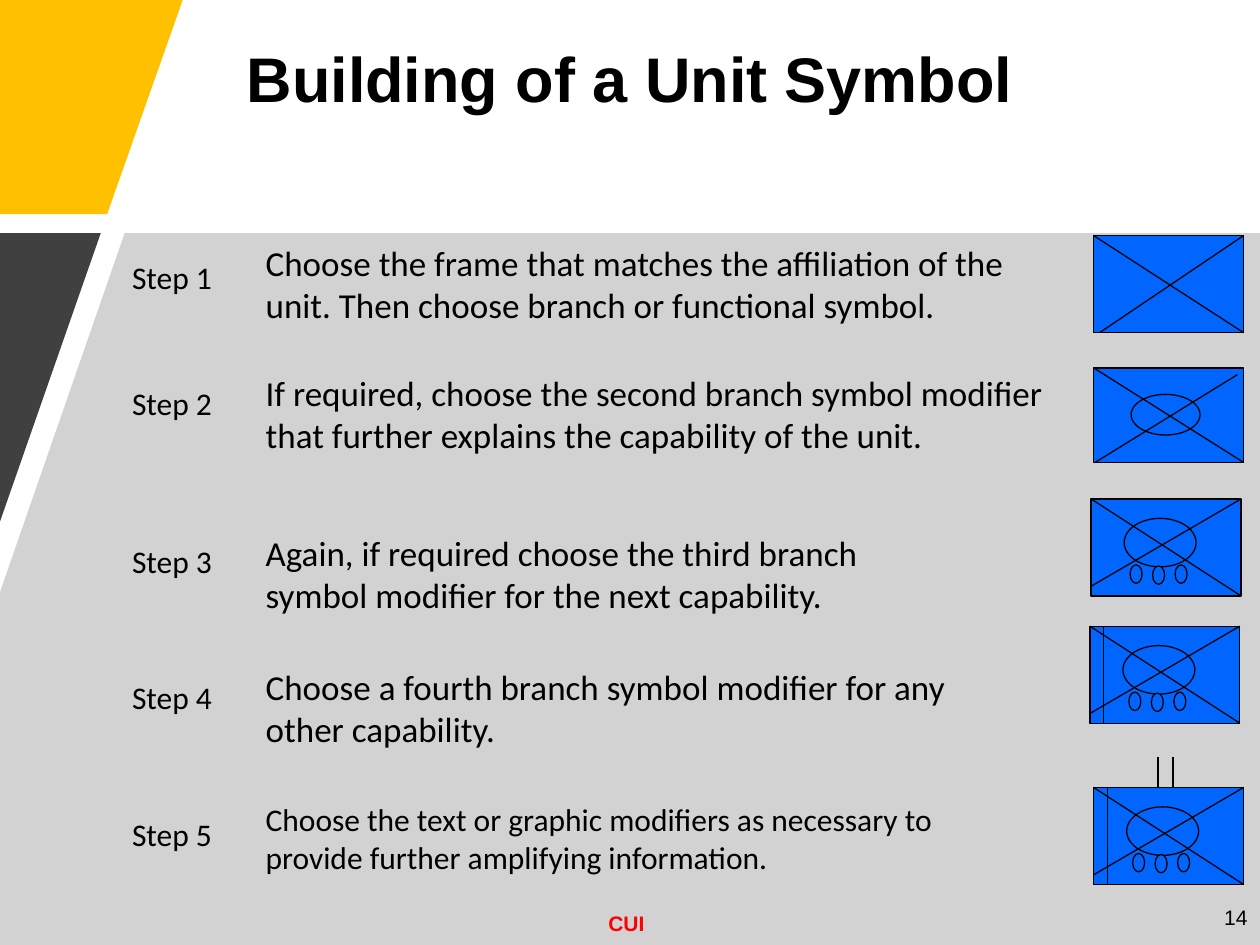
import pptx
import pptx.util
import pptx.dml.color
import pptx.enum.shapes
import pptx.enum.text
import lxml.etree
from dataclasses import dataclass
from typing import NamedTuple

PP = pptx.enum.text.PP_ALIGN
ANCHOR = pptx.enum.text.MSO_ANCHOR
KIND = pptx.enum.shapes.MSO_SHAPE
LINE = pptx.enum.shapes.MSO_CONNECTOR.STRAIGHT
Pt = pptx.util.Pt
A = "http://schemas.openxmlformats.org/drawingml/2006/main"

# Grid of 100 columns by 75 rows
WIDE, HIGH = pptx.util.Inches(10), pptx.util.Inches(7.5)
COL, ROW = WIDE / 100, HIGH / 75


@dataclass(frozen=True)
class Theme:
    ink: str = "000000"
    gold: str = "FFC000"
    dark: str = "404040"
    gray: str = "A6A6A6"
    blue: str = "0066FF"
    red: str = "FF0000"
    head: str = "Arial"
    body: str = "Calibri"
    title: float = 36
    text: float = 20
    label: float = 18
    small: float = 12
    thin: float = 0.75
    thick: float = 1.5


class Box(NamedTuple):
    x: float
    y: float
    w: float
    h: float


class Mark(NamedTuple):
    """Parts of a unit symbol, in shares of its frame."""
    rise: tuple[float, float, float, float]
    oval: Box | None = None
    wheels: tuple[Box, ...] = ()
    bars: tuple[float, ...] = ()
    masts: tuple[float, ...] = ()


class Step(NamedTuple):
    top: float
    text: str
    box: Box
    frame: Box
    mark: Mark
    size: float


THEME = Theme()
SLOPE = (0, 0.9, 1, 0)
OVAL = Box(0.22, 0.2, 0.48, 0.5)
WHEELS = tuple(Box(0.26 + 0.15 * i, y, 0.08, 0.19)
               for i, y in enumerate((0.68, 0.69, 0.68)))

STEPS = [
    Step(20, "Choose the frame that matches the affiliation of the unit. "
         "Then choose branch or functional symbol.",
         Box(20.1, 18.7, 62.8, 7.7), Box(86.8, 18.7, 11.9, 7.7),
         Mark((0.04, 1, 1, 0)), THEME.text),
    Step(30, "If required, choose the second branch symbol modifier "
         "that further explains the capability of the unit.",
         Box(20.1, 29, 66.9, 7.7), Box(86.8, 29.2, 11.9, 7.5),
         Mark((0.01, 1, 0.96, 0.07), Box(0.25, 0.28, 0.46, 0.43)), THEME.text),
    Step(42.5, "Again, if required choose the third branch "
         "symbol modifier for the next capability.",
         Box(20.1, 41.7, 57.1, 7.7), Box(86.6, 39.6, 11.9, 7.7),
         Mark(SLOPE, OVAL, WHEELS), THEME.text),
    Step(53.3, "Choose a fourth branch symbol modifier for any other capability.",
         Box(20.1, 52.3, 57.1, 7.7), Box(86.5, 49.7, 11.9, 7.7),
         Mark(SLOPE, OVAL, WHEELS, (0.09,)), THEME.text),
    Step(64.2, "Choose the text or graphic modifiers as necessary to "
         "provide further amplifying information.",
         Box(20.1, 63, 57.1, 7), Box(86.8, 62.5, 11.9, 7.7),
         Mark(SLOPE, OVAL, WHEELS, (0.09,), (0.43, 0.53)), THEME.label),
]


def rgb(tint: str):
    return pptx.dml.color.RGBColor.from_string(tint)


def place(box: Box) -> list[int]:
    return [round(v * u) for v, u in zip(box, (COL, ROW, COL, ROW))]


def within(frame: Box, x: float, y: float) -> tuple[float, float]:
    return frame.x + x * frame.w, frame.y + y * frame.h


def write(shape, text: str, *, size: float, font: str = THEME.body,
          tint: str = THEME.ink, bold: bool = False, align=PP.LEFT,
          anchor=ANCHOR.TOP, wrap: bool = True, lead: float = 1):
    frame = shape.text_frame
    frame.word_wrap = wrap
    frame.auto_size = pptx.enum.text.MSO_AUTO_SIZE.NONE
    frame.vertical_anchor = anchor
    par = frame.paragraphs[0]
    par.text, par.alignment, par.line_spacing = text, align, lead
    par.space_before = Pt(0)
    par.font.size, par.font.name, par.font.bold = Pt(size), font, bold
    par.font.color.rgb = rgb(tint)


def label(shapes, box: Box, text: str, **form):
    write(shapes.add_textbox(*place(box)), text, **form)


def panel(shapes, points: list[tuple[float, float]], tint: str, alpha: int = 100):
    first, *rest = [(round(x * COL), round(y * ROW)) for x, y in points]
    pen = shapes.build_freeform(*first)
    pen.add_line_segments(rest, close=True)
    shape = pen.convert_to_shape()
    shape.shadow.inherit = False
    shape.fill.solid()
    shape.fill.fore_color.rgb = rgb(tint)
    shape.line.fill.background()
    if alpha < 100:
        color = shape.fill._xPr.find(f".//{{{A}}}srgbClr")
        lxml.etree.SubElement(color, f"{{{A}}}alpha", val=str(alpha * 1000))


def solid(shapes, kind, box: Box):
    shape = shapes.add_shape(kind, *place(box))
    shape.shadow.inherit = False
    shape.fill.solid()
    shape.fill.fore_color.rgb = rgb(THEME.blue)
    shape.line.color.rgb = rgb(THEME.ink)
    shape.line.width = Pt(THEME.thin)


def stroke(shapes, frame: Box, ends: tuple, width: float = THEME.thin):
    (x1, y1), (x2, y2) = within(frame, *ends[:2]), within(frame, *ends[2:])
    line = shapes.add_connector(LINE, round(x1 * COL), round(y1 * ROW),
                                round(x2 * COL), round(y2 * ROW))
    line.line.color.rgb = rgb(THEME.ink)
    line.line.width = Pt(width)
    lxml.etree.SubElement(line._element.spPr, f"{{{A}}}effectLst")


def oval(shapes, frame: Box, part: Box):
    solid(shapes, KIND.OVAL, Box(*within(frame, part.x, part.y),
                                 part.w * frame.w, part.h * frame.h))


def symbol(shapes, frame: Box, mark: Mark):
    group = shapes.add_group_shape().shapes
    solid(group, KIND.RECTANGLE, frame)
    if mark.oval:
        oval(group, frame, mark.oval)
    for ends in ((0, 0, 1, 1), mark.rise):
        stroke(group, frame, ends)
    for wheel in mark.wheels:
        oval(group, frame, wheel)
    for x in mark.bars:
        stroke(group, frame, (x, 0, x, 1))
    for x in mark.masts:
        stroke(group, frame, (x, -0.31, x, -0.01), THEME.thick)


def main():
    deck = pptx.Presentation()
    deck.slide_width, deck.slide_height = WIDE, HIGH
    slide = deck.slides.add_slide(deck.slide_layouts.get_by_name("Title Only"))
    shapes = slide.shapes

    # Background panels
    panel(shapes, [(0, 0), (14.5, 0), (8.5, 17), (0, 17)], THEME.gold)
    panel(shapes, [(9.9, 18.5), (100, 18.5), (100, 75), (0, 75), (0, 47)],
          THEME.gray, 50)
    panel(shapes, [(0, 18.5), (8, 18.5), (0, 41.4)], THEME.dark)

    # Title
    title = shapes.title
    title.left, title.top, title.width, title.height = place(Box(0, 3.8, 100, 5.8))
    write(title, "Building of a Unit Symbol", size=THEME.title, font=THEME.head,
          bold=True, align=PP.CENTER, lead=0.8)

    # Steps with their symbols
    for number, step in enumerate(STEPS, 1):
        label(shapes, Box(9.5, step.top, 11.4, 5), f"Step {number}",
              size=THEME.label, wrap=False)
        label(shapes, step.box, step.text, size=step.size)
        symbol(shapes, step.frame, step.mark)

    # Footer
    label(shapes, Box(47.3, 71.8, 4.9, 3), "CUI", size=THEME.small,
          font=THEME.head, tint=THEME.red, bold=True, wrap=False)
    label(shapes, Box(77.5, 70.8, 22.5, 4), "14", size=THEME.small,
          font=THEME.head, align=PP.RIGHT, anchor=ANCHOR.MIDDLE)

    deck.save("out.pptx")


if __name__ == "__main__":
    main()
